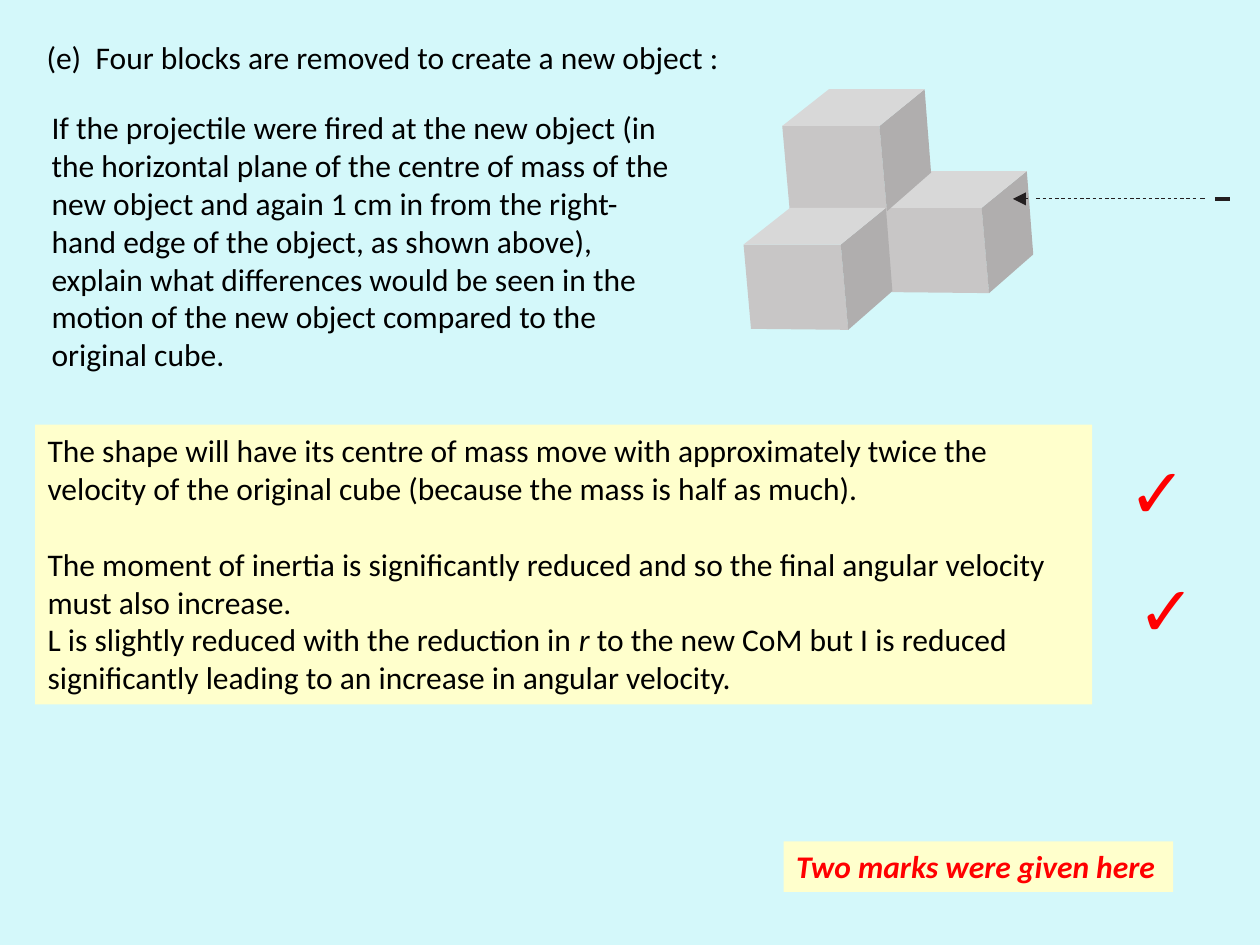
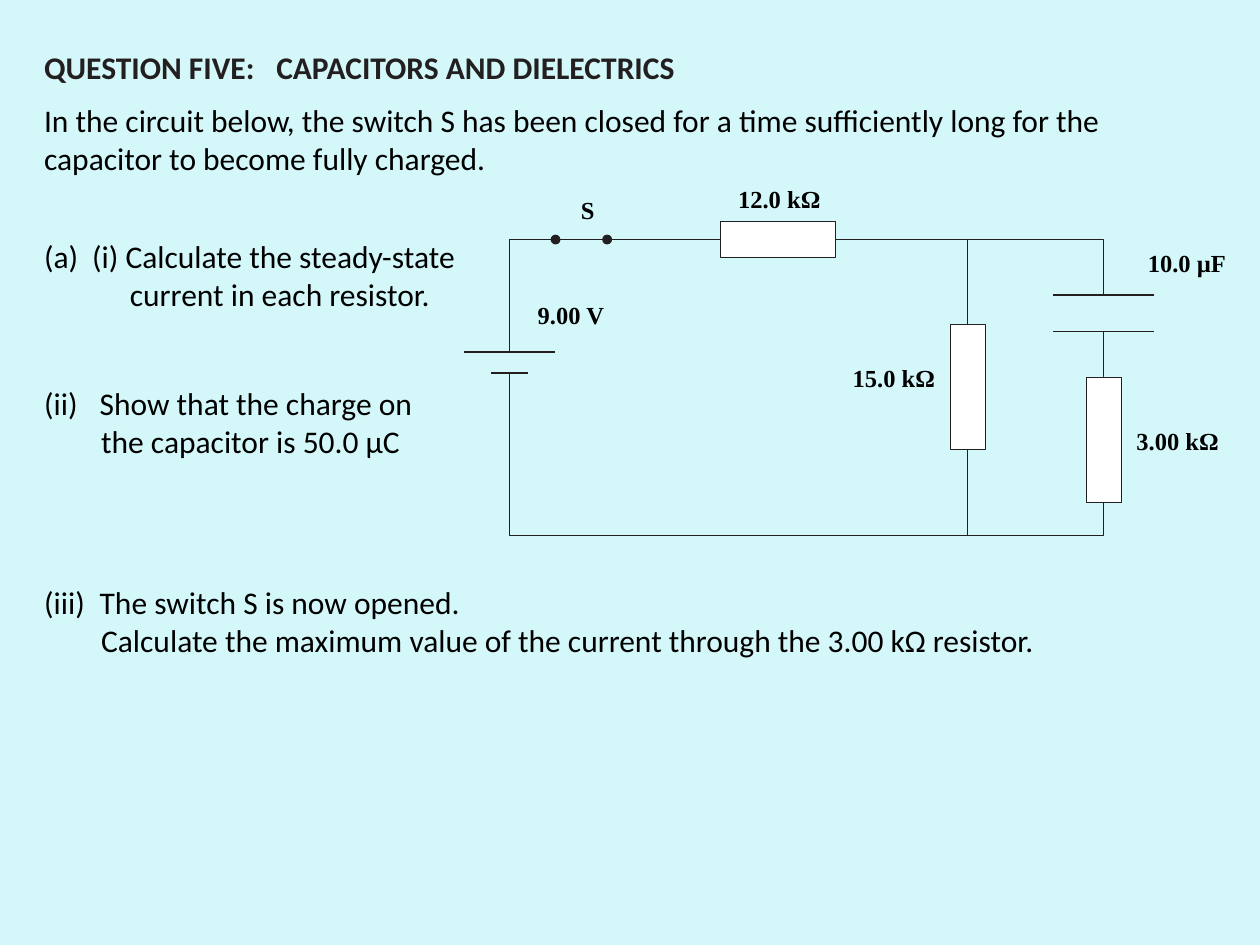
from lxml.etree import SubElement
from pptx import Presentation
from pptx.dml.color import RGBColor
from pptx.enum.dml import MSO_LINE
from pptx.enum.shapes import MSO_CONNECTOR, MSO_SHAPE
from pptx.oxml.ns import qn
from pptx.util import Cm, Pt

BACKGROUND = "D4F8FA"
ANSWER_FILL = "FFFFCC"
BLACK, INK, WHITE, RED = "000000", "231F20", "FFFFFF", "FF0000"
FRONT, SIDE, TOP = "C8C6C6", "B0AEAE", "D8D8D8"
BODY_FONT, LABEL_FONT = "Calibri", "Times New Roman"


def rgb(color):
    return RGBColor.from_string(color)


def new_slide(prs):
    s = prs.slides.add_slide(prs.slide_layouts[6])
    s.background.fill.solid()
    s.background.fill.fore_color.rgb = rgb(BACKGROUND)
    return s


def add_text(s, box, paragraphs, size=18, color=BLACK, font=BODY_FONT,
             bold=False, italic=False, fill=None, wrap=True):
    """Add a text box; text between asterisks is set in italics."""
    sp = s.shapes.add_textbox(*(Cm(v) for v in box))
    if fill:
        sp.fill.solid()
        sp.fill.fore_color.rgb = rgb(fill)
    tf = sp.text_frame
    tf.word_wrap = wrap
    for i, text in enumerate(paragraphs):
        p = tf.add_paragraph() if i else tf.paragraphs[0]
        first, *others = text.split("*")
        p.text = first
        for part in others:
            p.add_run().text = part
        for j, r in enumerate(p.runs):
            r.font.name = font
            r.font.size = Pt(size)
            r.font.bold = bold
            r.font.italic = italic or j % 2 == 1
            r.font.color.rgb = rgb(color)
    return tf


def add_label(s, left, top, width, text):
    add_text(s, (left, top, width, 0.86), [text], 14, font=LABEL_FONT,
             bold=True, wrap=False)


def add_tab_stop(p, position):
    tabs = SubElement(p._p.get_or_add_pPr(), qn("a:tabLst"))
    SubElement(tabs, qn("a:tab"), pos=str(Cm(position)), algn="l")


def add_question(s, box, lines, numbering, start, hang, indent):
    """Add a numbered first line and an indented second line."""
    first, second = add_text(s, box, lines).paragraphs
    pPr = first._p.get_or_add_pPr()
    pPr.set("marL", str(Cm(hang)))
    pPr.set("indent", str(-Cm(hang)))
    SubElement(pPr, qn("a:buFont"), typeface="+mj-lt")
    SubElement(pPr, qn("a:buAutoNum"), type=numbering, startAt=str(start))
    second._p.get_or_add_pPr().set("marL", str(Cm(indent)))


def set_line(line, width, color=INK):
    line.color.rgb = rgb(color)
    line.width = Pt(width)


def add_line(s, x1, y1, x2, y2, width=0.5, dash=None):
    c = s.shapes.add_connector(MSO_CONNECTOR.STRAIGHT,
                               Cm(x1), Cm(y1), Cm(x2), Cm(y2))
    set_line(c.line, width)
    if dash:
        c.line.dash_style = dash
    SubElement(c._element.spPr, qn("a:effectLst"))


def build_outline(s, points, close):
    (x, y), *others = [(Cm(x), Cm(y)) for x, y in points]
    builder = s.shapes.build_freeform(x, y)
    builder.add_line_segments(others, close=close)
    sp = builder.convert_to_shape()
    sp.shadow.inherit = False
    return sp


def add_polygon(s, points, fill):
    sp = build_outline(s, points, True)
    sp.fill.solid()
    sp.fill.fore_color.rgb = rgb(fill)
    sp.line.fill.background()


def add_wire(s, points):
    sp = build_outline(s, points, False)
    sp.fill.background()
    set_line(sp.line, 0.5)


def add_block(s, x, y):
    """Draw a cube whose front face has its top left corner at x, y."""
    faces = [
        (FRONT, [(0, 0), (1.96, 0), (2.11, 1.72), (0.15, 1.7)]),
        (SIDE, [(1.96, 0), (2.87, -0.74), (3, 0.94), (2.11, 1.72)]),
        (TOP, [(0, 0), (0.94, -0.74), (2.87, -0.74), (1.96, 0)]),
    ]
    for fill, corners in faces:
        add_polygon(s, [(x + dx, y + dy) for dx, dy in corners], fill)


def add_preset(s, kind, box, fill):
    sp = s.shapes.add_shape(kind, *(Cm(v) for v in box))
    sp.shadow.inherit = False
    sp.fill.solid()
    sp.fill.fore_color.rgb = rgb(fill)
    set_line(sp.line, 0.5)


def add_projectile_path(s, y):
    add_line(s, 20.63, y, 20.72, y)
    add_line(s, 20.89, y, 24.12, y, dash=MSO_LINE.DASH)
    add_line(s, 24.2, y, 24.29, y)
    add_polygon(s, [(20.68, y - 0.13), (20.42, y), (20.68, y + 0.13)], INK)
    add_line(s, 24.49, y, 24.79, y, 2.25)


def add_circuit(s):
    left, middle, right = 10.27, 19.51, 22.25
    top, bottom = 4.83, 10.8
    battery_plates = 7.09, 7.52
    capacitor_plates = 5.94, 6.68

    add_wire(s, [(left, battery_plates[0]), (left, top), (right, top),
                 (right, capacitor_plates[0])])
    add_wire(s, [(right, capacitor_plates[1]), (right, bottom),
                 (left, bottom), (left, battery_plates[1])])
    add_line(s, middle, top, middle, bottom)
    for y, half in zip(battery_plates, (0.92, 0.37)):
        add_line(s, left - half, y, left + half, y, 1)
    for y in capacitor_plates:
        add_line(s, right - 1.02, y, right + 1.02, y, 1)
    for x in (11.2, 12.24):
        add_preset(s, MSO_SHAPE.OVAL, (x - 0.09, top - 0.09, 0.18, 0.18), INK)
    add_preset(s, MSO_SHAPE.RECTANGLE, (14.53, 4.46, 2.32, 0.74), WHITE)
    for x, y in ((middle, 6.54), (right, 7.6)):
        add_preset(s, MSO_SHAPE.RECTANGLE, (x - 0.35, y, 0.7, 2.53), WHITE)

    for label in [(16.94, 7.19, 2.18, "15.0 kΩ"),
                  (14.63, 3.58, 2.18, "12.0 kΩ"),
                  (22.66, 8.46, 2.18, "3.00 kΩ"),
                  (22.89, 4.88, 2.11, "10.0 µF"),
                  (10.59, 5.92, 1.85, "9.00 V"),
                  (11.46, 3.81, 0.79, "S")]:
        add_label(s, *label)


def add_blocks_slide(prs):
    s = new_slide(prs)
    tf = add_text(s, (0.69, 0.64, 24.13, 1.02), [
        "(e)\tFour blocks are removed to create a new object :"])
    add_tab_stop(tf.paragraphs[0], 0.99)

    add_block(s, 17.83, 4.19)
    add_block(s, 15.77, 2.54)
    add_projectile_path(s, 4.01)
    add_block(s, 14.99, 4.93)

    add_text(s, (0.79, 2.06, 13.13, 5.64), [
        "If the projectile were fired at the new object (in the horizontal "
        "plane of the centre of mass of the new object and again 1 cm in from "
        "the right-hand edge of the object, as shown above), explain what "
        "differences would be seen in the motion of the new object compared "
        "to the original cube."])
    tf = add_text(s, (0.71, 8.56, 21.31, 5.64), [
        "The shape will have its centre of mass move with approximately twice "
        "the velocity of the original cube (because the mass is half as much).",
        "The moment of inertia is significantly reduced and so the final "
        "angular velocity must also increase.",
        "L is slightly reduced with the reduction in *r* to the new CoM but I "
        "is reduced significantly leading to an increase in angular velocity.",
    ], fill=ANSWER_FILL)
    tf.paragraphs[1].space_before = Pt(22)
    add_text(s, (15.8, 16.96, 7.85, 1.02), ["Two marks were given here"],
             color=RED, bold=True, italic=True, fill=ANSWER_FILL, wrap=False)
    for x, y in ((22.68, 11.3), (22.5, 8.92)):
        add_text(s, (x, y, 0.86, 1.96), ["✓"], 40, RED)


def add_circuit_slide(prs):
    s = new_slide(prs)
    tf = add_text(s, (0.64, 0.84, 16.94, 1.02), [
        "QUESTION FIVE:\tCAPACITORS AND DIELECTRICS"], color=INK, bold=True)
    add_tab_stop(tf.paragraphs[0], 4.68)
    add_text(s, (0.64, 1.91, 24.13, 1.8), [
        "In the circuit below, the switch S has been closed for a time "
        "sufficiently long for the capacitor to become fully charged."])
    add_circuit(s)
    add_question(s, (0.64, 4.65, 9.09, 1.8), [
        "(i) Calculate the steady-state", "current in each resistor."],
        "alphaLcParenBoth", 1, 0.97, 1.73)
    add_question(s, (0.64, 7.62, 8.69, 1.8), [
        "Show that the charge on", "the capacitor is 50.0 µC"],
        "romanLcParenBoth", 2, 1.12, 1.15)
    add_question(s, (0.64, 11.63, 21.79, 1.8), [
        "The switch S is now opened.",
        "Calculate the maximum value of the current through the 3.00 kΩ "
        "resistor."],
        "romanLcParenBoth", 3, 1.12, 1.15)


def main():
    prs = Presentation()
    prs.slide_width, prs.slide_height = Cm(25.4), Cm(19.05)
    add_blocks_slide(prs)
    add_circuit_slide(prs)
    prs.save("out.pptx")


if __name__ == "__main__":
    main()
